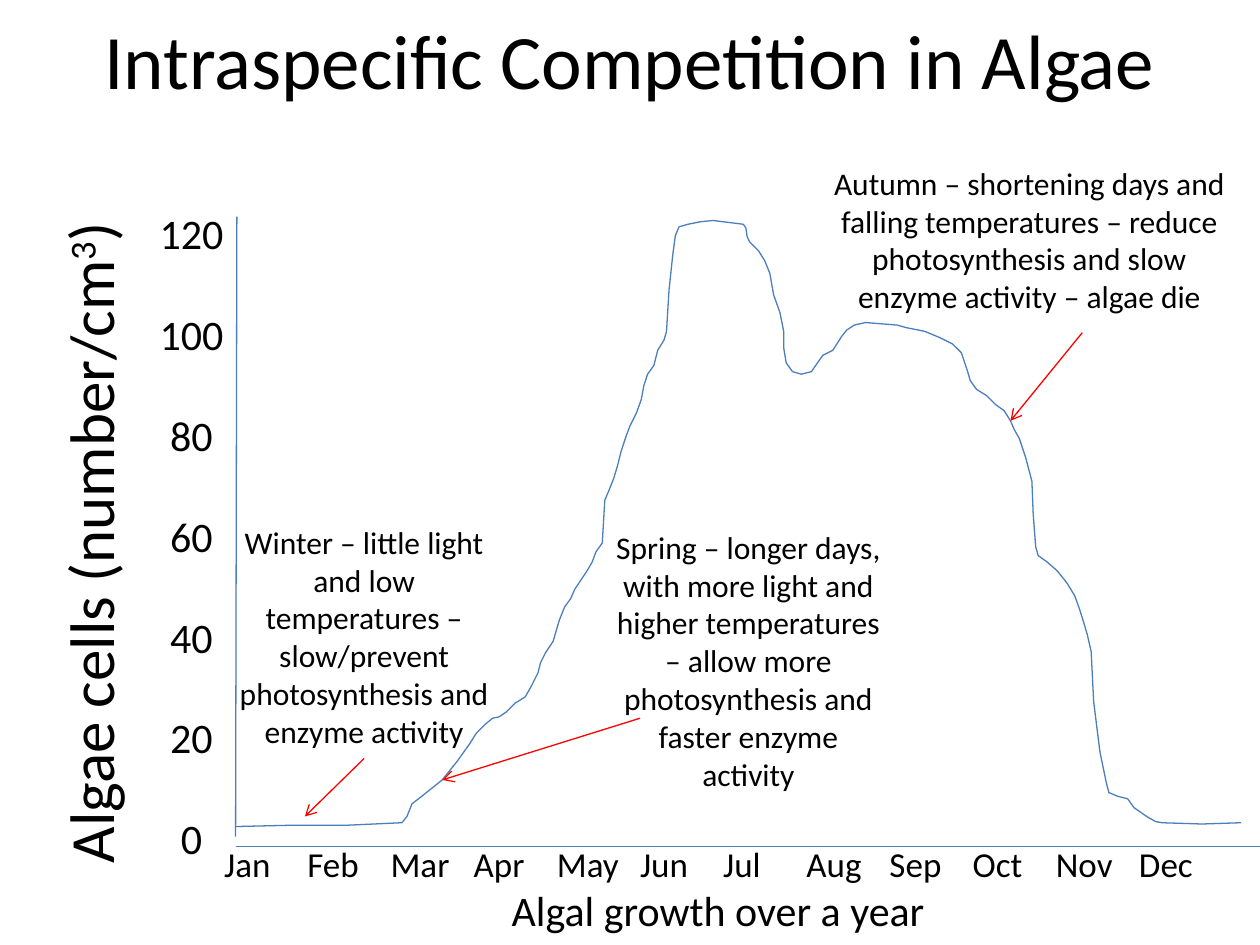
from pptx import Presentation
from pptx.dml.color import RGBColor
from pptx.enum.shapes import MSO_CONNECTOR
from pptx.enum.text import MSO_ANCHOR, PP_ALIGN
from pptx.oxml.ns import qn
from pptx.util import Inches, Pt
from lxml.etree import SubElement

COLORS = {"text": "000000", "curve": "4B7EBC", "arrow": "FF0000"}
MONTHS = "Jan Feb Mar Apr May Jun Jul Aug Sep Oct Nov Dec".split()
MONTH_STEP = 0.66

ALGAE_CURVE = [
    (1.87, 6.56), (2.31, 6.55), (2.75, 6.55), (3.19, 6.53), (3.23, 6.48),
    (3.27, 6.38), (3.36, 6.31), (3.51, 6.19), (3.63, 6.04), (3.73, 5.9),
    (3.78, 5.82), (3.85, 5.75), (3.91, 5.7), (3.96, 5.69), (4.02, 5.65),
    (4.09, 5.58), (4.17, 5.53), (4.22, 5.44), (4.27, 5.34), (4.29, 5.26),
    (4.33, 5.18), (4.39, 5.09), (4.44, 4.92), (4.48, 4.82), (4.53, 4.75),
    (4.56, 4.68), (4.66, 4.53), (4.7, 4.46), (4.73, 4.38), (4.78, 4.31),
    (4.8, 3.97), (4.83, 3.9), (4.87, 3.8), (4.9, 3.7), (4.93, 3.58),
    (4.97, 3.46), (5, 3.38), (5.05, 3.28), (5.09, 3.17), (5.11, 3.06),
    (5.14, 2.97), (5.19, 2.9), (5.22, 2.78), (5.27, 2.7), (5.29, 2.63),
    (5.31, 2.3), (5.34, 2.02), (5.36, 1.87), (5.39, 1.8), (5.46, 1.78),
    (5.56, 1.76), (5.66, 1.75), (5.9, 1.78), (5.92, 1.81), (5.93, 1.88),
    (5.95, 1.92), (6.02, 1.99), (6.07, 2.07), (6.11, 2.17), (6.14, 2.34),
    (6.19, 2.48), (6.22, 2.63), (6.22, 2.76), (6.24, 2.88), (6.29, 2.95),
    (6.36, 2.97), (6.44, 2.95), (6.53, 2.82), (6.61, 2.78), (6.68, 2.67),
    (6.72, 2.62), (6.78, 2.58), (6.87, 2.56), (7.12, 2.58), (7.19, 2.6),
    (7.34, 2.63), (7.46, 2.68), (7.56, 2.73), (7.63, 2.8), (7.68, 2.95),
    (7.7, 3.02), (7.75, 3.09), (7.83, 3.14), (7.9, 3.21), (7.97, 3.26),
    (8.02, 3.34), (8.05, 3.41), (8.09, 3.48), (8.14, 3.63), (8.19, 3.82),
    (8.2, 4.08), (8.22, 4.34), (8.24, 4.41), (8.31, 4.46), (8.39, 4.53),
    (8.47, 4.63), (8.53, 4.73), (8.57, 4.84), (8.61, 4.97), (8.63, 5.04),
    (8.66, 5.17), (8.68, 5.57), (8.73, 5.97), (8.78, 6.21), (8.8, 6.29),
    (8.87, 6.32), (8.95, 6.34), (9, 6.41), (9.1, 6.48), (9.17, 6.52),
    (9.22, 6.53), (9.54, 6.54), (9.85, 6.53),
]

SEASONS = [
    ("Winter – little light and low temperatures – slow/prevent "
     "photosynthesis and enzyme activity",
     (1.72, 4.1, 2.34, 1.92), (2.89, 6.02), (2.42, 6.48)),
    ("Spring – longer days, with more light and higher temperatures – allow "
     "more photosynthesis and faster enzyme activity",
     (4.77, 4.14, 2.34, 2.22), (5.08, 5.7), (3.51, 6.19)),
    ("Autumn – shortening days and falling temperatures – reduce "
     "photosynthesis and slow enzyme activity – algae die",
     (6.41, 1.25, 3.52, 1.31), (8.59, 2.64), (8.02, 3.34)),
]


def write_text(paragraph, text, size=18, align=PP_ALIGN.CENTER, after=0,
               superscript=False):
    paragraph.alignment = align
    paragraph.space_after = Pt(after)
    run = paragraph.add_run()
    run.text = text
    run.font.name = "Calibri"
    run.font.size = Pt(size)
    run.font.color.rgb = RGBColor.from_string(COLORS["text"])
    if superscript:
        run.font._element.set("baseline", "30000")


class SlideBuilder:
    line_width = Pt(0.75)

    def __init__(self, slide):
        self.slide = slide

    def title(self, text, box):
        shape = self.slide.shapes.title
        shape.left, shape.top, shape.width, shape.height = map(Inches, box)
        shape.text_frame.vertical_anchor = MSO_ANCHOR.MIDDLE
        write_text(shape.text_frame.paragraphs[0], text, size=44)

    def text_box(self, box, lines=(), side_margin=0.1, **text_format):
        shape = self.slide.shapes.add_textbox(*map(Inches, box))
        frame = shape.text_frame
        frame.word_wrap = True
        frame.margin_left = frame.margin_right = Inches(side_margin)
        for index, line in enumerate(lines):
            paragraph = frame.add_paragraph() if index else frame.paragraphs[0]
            write_text(paragraph, line, **text_format)
        return shape

    def style_line(self, shape, color):
        shape.line.color.rgb = RGBColor.from_string(COLORS[color])
        shape.line.width = self.line_width

    def line(self, start, end, color, arrow=False):
        connector = self.slide.shapes.add_connector(
            MSO_CONNECTOR.STRAIGHT, *map(Inches, start + end))
        self.style_line(connector, color)
        properties = connector.element.spPr
        if arrow:
            SubElement(properties.find(qn("a:ln")), qn("a:tailEnd"), type="arrow")
        SubElement(properties, qn("a:effectLst"))

    def curve(self, points, color):
        start, *rest = [(Inches(x), Inches(y)) for x, y in points]
        builder = self.slide.shapes.build_freeform(*start)
        builder.add_line_segments(rest, close=False)
        shape = builder.convert_to_shape()
        shape.fill.background()
        shape.shadow.inherit = False
        self.style_line(shape, color)

    def month_axis(self, box):
        shape = self.text_box(box, side_margin=0.3)
        months = shape.text_frame.paragraphs[0]
        write_text(months, "\t".join(MONTHS), size=20, align=PP_ALIGN.LEFT)
        tabs = SubElement(months._p.get_or_add_pPr(), qn("a:tabLst"))
        for index in range(1, len(MONTHS)):
            SubElement(tabs, qn("a:tab"), pos=str(Inches(MONTH_STEP * index)), algn="l")
        caption = shape.text_frame.add_paragraph()
        write_text(caption, "Algal growth over a year", size=24)

    def cell_axis_title(self, box):
        shape = self.text_box(box)
        shape.element.txBody.bodyPr.set("vert", "vert270")
        paragraph = shape.text_frame.paragraphs[0]
        for text, raised in (("Algae cells (number/cm", False), ("3", True), (")", False)):
            write_text(paragraph, text, size=36, align=PP_ALIGN.LEFT, superscript=raised)


def main():
    presentation = Presentation()
    presentation.slide_width = Inches(10)
    presentation.slide_height = Inches(7.5)
    slide = presentation.slides.add_slide(presentation.slide_layouts[5])
    builder = SlideBuilder(slide)

    builder.title("Intraspecific Competition in Algae", (0.5, -0.16, 9, 1.25))
    builder.line((1.88, 1.72), (1.87, 6.64), "curve")
    builder.line((1.87, 6.72), (10, 6.72), "curve")
    builder.month_axis((1.48, 6.64, 8.44, 0.84))
    cell_counts = [str(count) for count in range(120, -1, -20)]
    builder.text_box((1.09, 1.6, 0.86, 5.35), cell_counts, size=24, after=28.8)
    builder.cell_axis_title((0.36, 1.56, 0.81, 5.39))
    builder.curve(ALGAE_CURVE, "curve")
    for text, box, arrow_start, arrow_end in SEASONS:
        builder.text_box(box, [text])
        builder.line(arrow_start, arrow_end, "arrow", arrow=True)

    presentation.save("out.pptx")


if __name__ == "__main__":
    main()
